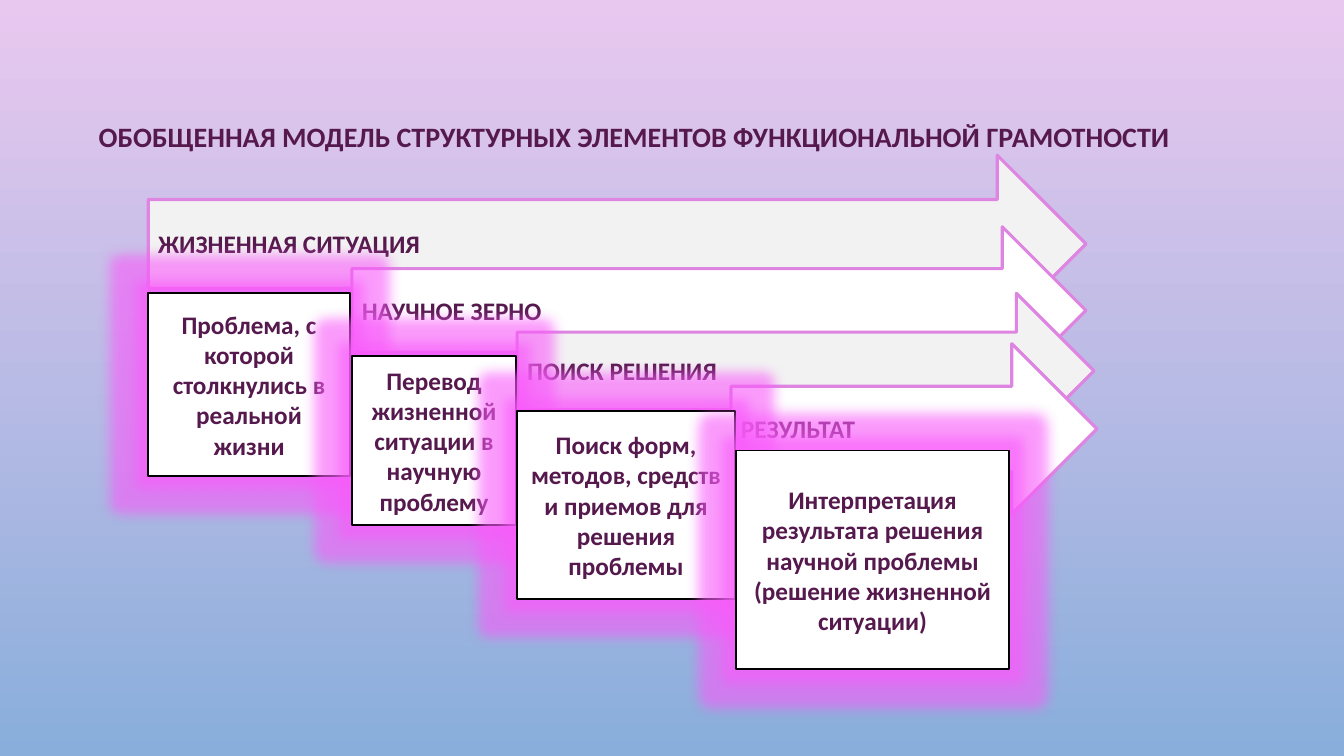
from dataclasses import dataclass

from lxml import etree
from pptx import Presentation
from pptx import util as u
from pptx.dml.color import RGBColor
from pptx.enum import shapes, text
from pptx.oxml.ns import qn
from pptx.shapes.autoshape import Shape
from pptx.slide import Slide
from pptx.text.text import TextFrame

WIDTH, HEIGHT = u.Inches(13.33), u.Inches(7.5)
FONT, INK = "Calibri", "56194D"
GLOW, GLOW_POINTS, GLOW_ALPHA = "F95BFB", 18, 60


@dataclass(frozen=True)
class Area:
    """A rectangle in percent of the slide's width and height."""
    left: float
    top: float
    width: float
    height: float

    def emu(self) -> tuple[int, int, int, int]:
        return (round(WIDTH * self.left / 100), round(HEIGHT * self.top / 100),
                round(WIDTH * self.width / 100), round(HEIGHT * self.height / 100))


@dataclass(frozen=True)
class Stage:
    name: str
    arrow: Area
    arrow_fill: str
    meaning: str
    card: Area


TITLE = "ОБОБЩЕННАЯ МОДЕЛЬ СТРУКТУРНЫХ ЭЛЕМЕНТОВ ФУНКЦИОНАЛЬНОЙ ГРАМОТНОСТИ"
TITLE_AREA = Area(6.6, 14.27, 85, 76.93)
STAGES = [
    Stage("ЖИЗНЕННАЯ СИТУАЦИЯ", Area(11.03, 20.53, 69.77, 23.47), "F2F2F2",
          "Проблема, с которой столкнулись в реальной жизни",
          Area(11.03, 38.8, 15, 24.13)),
    Stage("НАУЧНОЕ ЗЕРНО", Area(26.18, 30, 54.62, 22.13), "FFFFFF",
          "Перевод жизненной ситуации в научную проблему",
          Area(26.18, 47.07, 12.23, 22.4)),
    Stage("ПОИСК РЕШЕНИЯ", Area(38.48, 38.8, 42.92, 20.53), "F2F2F2",
          "Поиск форм, методов, средств и приемов для решения проблемы",
          Area(38.48, 54.4, 16.2, 24.8)),
    Stage("РЕЗУЛЬТАТ", Area(54.39, 45.47, 27.23, 22.53), "FFFFFF",
          "Интерпретация результата решения научной проблемы "
          "(решение жизненной ситуации)",
          Area(54.76, 59.6, 20.33, 28.93)),
]


def color(value: str) -> RGBColor:
    return RGBColor.from_string(value)


def write(frame: TextFrame, words: str, size: float, align: text.PP_ALIGN,
          anchor: text.MSO_ANCHOR) -> None:
    frame.word_wrap = True
    frame.vertical_anchor = anchor
    paragraph = frame.paragraphs[0]
    paragraph.text = words
    paragraph.alignment = align
    font = paragraph.font
    font.name, font.size, font.bold = FONT, u.Pt(size), True
    font.color.rgb = color(INK)


def add_block(slide: Slide, kind: shapes.MSO_SHAPE, area: Area, fill: str,
              line: str, line_width: float, words: str,
              align: text.PP_ALIGN) -> Shape:
    block = slide.shapes.add_shape(kind, *area.emu())
    block.shadow.inherit = False
    block.fill.solid()
    block.fill.fore_color.rgb = color(fill)
    block.line.color.rgb = color(line)
    block.line.width = u.Pt(line_width)
    write(block.text_frame, words, 18, align, text.MSO_ANCHOR.MIDDLE)
    return block


def add_glow(block: Shape) -> None:
    effects = block._element.spPr.find(qn("a:effectLst"))
    glow = etree.SubElement(effects, qn("a:glow"), rad=str(u.Pt(GLOW_POINTS)))
    tint = etree.SubElement(glow, qn("a:srgbClr"), val=GLOW)
    etree.SubElement(tint, qn("a:alpha"), val=str(GLOW_ALPHA * 1000))


def paint_background(slide: Slide, top: str, bottom: str) -> None:
    fill = slide.background.fill
    fill.gradient()
    fill.gradient_angle = 270
    for stop, value in zip(fill.gradient_stops, (top, bottom)):
        stop.color.rgb = color(value)


def add_title(slide: Slide) -> None:
    title = slide.shapes.add_textbox(*TITLE_AREA.emu()).text_frame
    write(title, TITLE, 20, text.PP_ALIGN.LEFT, text.MSO_ANCHOR.TOP)
    title.paragraphs[0].line_spacing = 1.2


def main() -> None:
    deck = Presentation()
    deck.slide_width, deck.slide_height = WIDTH, HEIGHT
    slide = deck.slides.add_slide(deck.slide_layouts[6])
    paint_background(slide, "E9C8EF", "89AEDB")
    add_title(slide)
    for stage in STAGES:
        add_block(slide, shapes.MSO_SHAPE.RIGHT_ARROW, stage.arrow,
                  stage.arrow_fill, "DE85E1", 2.25, stage.name,
                  text.PP_ALIGN.LEFT)
    for stage in STAGES:
        card = add_block(slide, shapes.MSO_SHAPE.RECTANGLE, stage.card,
                         "FFFFFF", "000000", 1.25, stage.meaning,
                         text.PP_ALIGN.CENTER)
        add_glow(card)
    deck.save("out.pptx")


if __name__ == "__main__":
    main()
